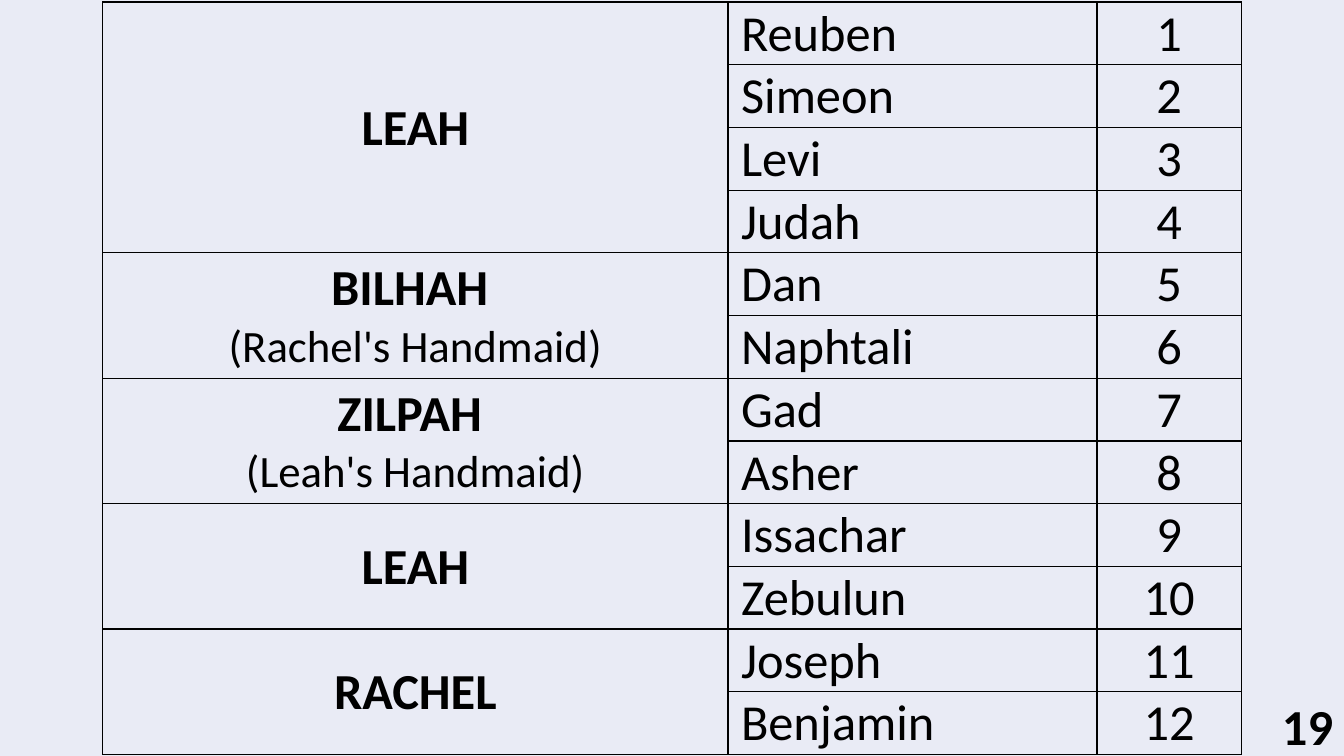
from dataclasses import dataclass

from lxml.etree import SubElement
from pptx import Presentation
from pptx.dml.color import RGBColor
from pptx.enum.text import MSO_VERTICAL_ANCHOR as Anchor, PP_PARAGRAPH_ALIGNMENT as Align
from pptx.oxml.ns import qn
from pptx.slide import Slide
from pptx.table import Table, _Cell as Cell
from pptx.text.text import _Paragraph as Paragraph
from pptx.util import Pt

PX = 9144  # EMU in one px, 100 px to the inch
BLACK = RGBColor(0x00, 0x00, 0x00)
PALE_BLUE = RGBColor(0xE9, 0xEB, 0xF5)
FONT = "Calibri"
PAGE_WIDTH, PAGE_HEIGHT = 1333, 750
TABLE_LEFT, TABLE_TOP = 102, 2
COLUMN_WIDTHS = (620, 366, 143)
ROW_HEIGHT = 62
SIDE_MARGIN, NAME_MARGIN, TOP_MARGIN = 2, 13, 1


@dataclass(frozen=True)
class Mother:
    name: str
    sons: tuple[str, ...]
    role: str = ""


MOTHERS = (
    Mother("LEAH", ("Reuben", "Simeon", "Levi", "Judah")),
    Mother("BILHAH ", ("Dan", "Naphtali"), "(Rachel's Handmaid)"),
    Mother("ZILPAH ", ("Gad", "Asher"), "(Leah's Handmaid)"),
    Mother("LEAH", ("Issachar", "Zebulun")),
    Mother("RACHEL", ("Joseph", "Benjamin")),
)


def write(para: Paragraph, text: str, align: Align, size: int = 36, bold: bool = False) -> None:
    para.alignment = align
    span = para.add_run()
    span.text = text
    span.font.color.rgb = BLACK
    for name, value in {"name": FONT, "size": Pt(size), "bold": bold}.items():
        setattr(span.font, name, value)


def style_cell(cell: Cell, left: int = SIDE_MARGIN) -> None:
    formats = {
        "margin_left": left * PX,
        "margin_right": SIDE_MARGIN * PX,
        "margin_top": TOP_MARGIN * PX,
        "margin_bottom": 0,
        "vertical_anchor": Anchor.MIDDLE,
    }
    for name, value in formats.items():
        setattr(cell, name, value)
    # Borders come before the fill in the cell properties
    properties = cell._tc.get_or_add_tcPr()
    for side in ("a:lnL", "a:lnR", "a:lnT", "a:lnB"):
        line = SubElement(properties, qn(side), w=str(Pt(1)))
        solid = SubElement(line, qn("a:solidFill"))
        SubElement(solid, qn("a:srgbClr"), val=str(BLACK))
    cell.fill.solid()
    cell.fill.fore_color.rgb = PALE_BLUE


def fill_mother(table: Table, mother: Mother, first_row: int) -> None:
    for row, son in enumerate(mother.sons, first_row):
        mother_cell, son_cell, number_cell = (table.cell(row, column) for column in range(3))
        style_cell(mother_cell)
        style_cell(son_cell, NAME_MARGIN)
        style_cell(number_cell)
        write(son_cell.text_frame.paragraphs[0], son, Align.LEFT)
        write(number_cell.text_frame.paragraphs[0], str(row + 1), Align.CENTER)

    heading = table.cell(first_row, 0)
    heading.merge(table.cell(first_row + len(mother.sons) - 1, 0))
    write(heading.text_frame.paragraphs[0], mother.name, Align.CENTER, bold=True)
    if mother.role:
        write(heading.text_frame.add_paragraph(), mother.role, Align.CENTER, size=32)


def add_sons_table(page: Slide) -> None:
    row_count = sum(len(mother.sons) for mother in MOTHERS)
    table = page.shapes.add_table(
        row_count, len(COLUMN_WIDTHS), TABLE_LEFT * PX, TABLE_TOP * PX,
        sum(COLUMN_WIDTHS) * PX, row_count * ROW_HEIGHT * PX,
    ).table
    table.first_row = table.horz_banding = False
    for column, width in zip(table.columns, COLUMN_WIDTHS):
        column.width = width * PX
    first_row = 0
    for mother in MOTHERS:
        fill_mother(table, mother, first_row)
        first_row += len(mother.sons)


def add_page_number(page: Slide, number: str) -> None:
    box = page.shapes.add_textbox(1258 * PX, 675 * PX, 74 * PX, 75 * PX)
    frame = box.text_frame
    frame.word_wrap = True
    frame.vertical_anchor = Anchor.BOTTOM
    para = frame.paragraphs[0]
    para.line_spacing = 0.5
    write(para, number, Align.RIGHT, bold=True)


def main() -> None:
    deck = Presentation()
    deck.slide_width, deck.slide_height = PAGE_WIDTH * PX, PAGE_HEIGHT * PX
    page = deck.slides.add_slide(deck.slide_layouts.get_by_name("Blank"))
    page.background.fill.solid()
    page.background.fill.fore_color.rgb = PALE_BLUE
    add_sons_table(page)
    add_page_number(page, "19")
    deck.save("out.pptx")


if __name__ == "__main__":
    main()
